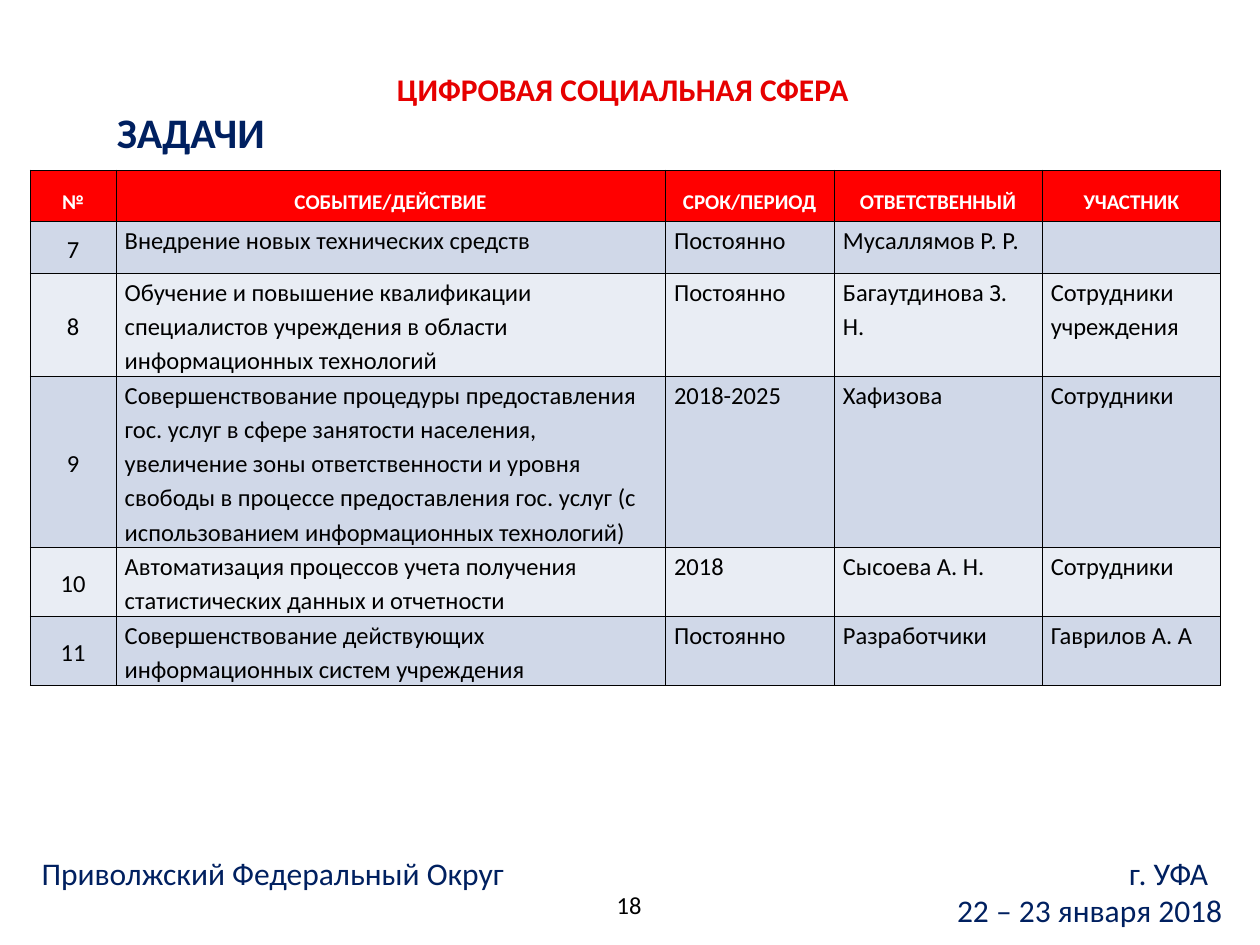
from dataclasses import dataclass

from lxml import etree
from pptx import Presentation
from pptx.dml.color import RGBColor
from pptx.enum.text import MSO_ANCHOR, MSO_AUTO_SIZE, PP_ALIGN
from pptx.oxml.ns import qn
from pptx.util import Inches, Pt

LEFT, CENTER, RIGHT = PP_ALIGN.LEFT, PP_ALIGN.CENTER, PP_ALIGN.RIGHT
TOP, MIDDLE = MSO_ANCHOR.TOP, MSO_ANCHOR.MIDDLE
NO_AUTOFIT = MSO_AUTO_SIZE.NONE


@dataclass(frozen=True)
class Theme:
    font: str = "Calibri"
    title: str = "E60000"
    navy: str = "002060"
    header: str = "FF0000"
    bands: tuple = ("D0D8E8", "E9EDF4")
    black: str = "000000"
    white: str = "FFFFFF"
    heading_size: int = 24
    title_size: int = 18
    body_size: int = 14
    header_size: int = 12
    border: float = 0.5


THEME = Theme()
SLIDE_SIZE = (10, 7.5)

TITLE = "ЦИФРОВАЯ СОЦИАЛЬНАЯ СФЕРА"
HEADING = "ЗАДАЧИ"
FOOTER_LINES = [("Приволжский Федеральный Округ\tг. УФА", LEFT), ("22 – 23 января 2018", RIGHT)]
FOOTER_TAB = 9.26
SLIDE_NUMBER = "18"

HEADERS = ["№", "СОБЫТИЕ/ДЕЙСТВИЕ", "СРОК/ПЕРИОД", "ОТВЕТСТВЕННЫЙ", "УЧАСТНИК"]
TASKS = [
    ("7", "Внедрение новых технических средств", "Постоянно", "Мусаллямов Р. Р.", ""),
    ("8", "Обучение и повышение квалификации специалистов учреждения в области "
          "информационных технологий", "Постоянно", "Багаутдинова З. Н.", "Сотрудники учреждения"),
    ("9", "Совершенствование процедуры предоставления гос. услуг в сфере занятости населения, "
          "увеличение зоны ответственности и уровня свободы в процессе предоставления гос. услуг "
          "(с использованием информационных технологий)", "2018-2025", "Хафизова", "Сотрудники"),
    ("10", "Автоматизация процессов учета получения статистических данных и отчетности",
     "2018", "Сысоева А. Н.", "Сотрудники"),
    ("11", "Совершенствование действующих информационных систем учреждения",
     "Постоянно", "Разработчики", "Гаврилов А. А"),
]
COLUMN_WIDTHS = [0.68, 4.36, 1.34, 1.65, 1.42]
ROW_HEIGHTS = [0.41, 0.41, 0.81, 1.34, 0.53, 0.53]
TABLE_ORIGIN = (0.24, 1.35)


def set_attributes(target, values):
    for name, value in values.items():
        setattr(target, name, value)


def write_paragraph(paragraph, text, size, color, bold=False, alignment=LEFT, spacing=None):
    set_attributes(paragraph, {"alignment": alignment, "line_spacing": spacing})
    font_values = {"name": THEME.font, "size": Pt(size), "bold": bold}
    targets = [paragraph.font]
    if text:
        run = paragraph.add_run()
        run.text = text
        targets = [run.font]
    for font in targets:
        set_attributes(font, font_values)
        font.color.rgb = RGBColor.from_string(color)


def format_box(shape, box, anchor=MIDDLE, **frame_values):
    set_attributes(shape, dict(zip(("left", "top", "width", "height"), map(Inches, box))))
    frame = shape.text_frame
    set_attributes(frame, {"word_wrap": True, "auto_size": NO_AUTOFIT,
                           "vertical_anchor": anchor, **frame_values})
    return frame


def add_text_box(slide, box, **frame_values):
    return format_box(slide.shapes.add_textbox(0, 0, 0, 0), box, **frame_values)


def add_right_tab(paragraph, position):
    tabs = etree.SubElement(paragraph._p.get_or_add_pPr(), qn("a:tabLst"))
    etree.SubElement(tabs, qn("a:tab"), pos=str(Inches(position)), algn="r")


def add_borders(cell):
    properties = cell._tc.get_or_add_tcPr()
    for side in ("lnL", "lnR", "lnT", "lnB"):
        line = etree.SubElement(properties, qn(f"a:{side}"), w=str(Pt(THEME.border)))
        fill = etree.SubElement(line, qn("a:solidFill"))
        etree.SubElement(fill, qn("a:srgbClr"), val=THEME.black)


def format_cell(cell, text, row, column):
    add_borders(cell)
    is_header = row == 0
    cell.fill.solid()
    color = THEME.header if is_header else THEME.bands[(row - 1) % 2]
    cell.fill.fore_color.rgb = RGBColor.from_string(color)
    paragraph = cell.text_frame.paragraphs[0]
    if is_header:
        write_paragraph(paragraph, text, THEME.header_size, THEME.white, True, CENTER, 1.5)
        return
    set_attributes(cell, {"margin_left": Inches(0.07), "margin_right": Inches(0.07),
                          "margin_top": 0, "margin_bottom": 0,
                          "vertical_anchor": TOP if column else MIDDLE})
    write_paragraph(paragraph, text, THEME.body_size, THEME.black,
                    alignment=LEFT if column else CENTER, spacing=1.15)


def add_task_table(slide):
    rows = [HEADERS, *TASKS]
    size = (sum(COLUMN_WIDTHS), sum(ROW_HEIGHTS))
    table = slide.shapes.add_table(len(rows), len(HEADERS),
                                   *map(Inches, TABLE_ORIGIN + size)).table
    for column, width in zip(table.columns, COLUMN_WIDTHS):
        column.width = Inches(width)
    for row, height in zip(table.rows, ROW_HEIGHTS):
        row.height = Inches(height)
    for row, texts in enumerate(rows):
        for column, text in enumerate(texts):
            format_cell(table.cell(row, column), text, row, column)


def add_footer(slide):
    frame = add_text_box(slide, (0.13, 6.78, 9.67, 0.59), margin_left=Inches(0.2))
    for index, (text, alignment) in enumerate(FOOTER_LINES):
        paragraph = frame.add_paragraph() if index else frame.paragraphs[0]
        write_paragraph(paragraph, text, THEME.title_size, THEME.navy, alignment=alignment)
        if "\t" in text:
            add_right_tab(paragraph, FOOTER_TAB)


def main():
    presentation = Presentation()
    presentation.slide_width, presentation.slide_height = map(Inches, SLIDE_SIZE)
    slide = presentation.slides.add_slide(presentation.slide_layouts[5])

    title = format_box(slide.shapes.title, (3.05, 0.51, 3.83, 0.39))
    write_paragraph(title.paragraphs[0], TITLE, THEME.title_size, THEME.title, True)

    heading = add_text_box(slide, (0.83, 0.8, 5, 0.5), anchor=TOP)
    write_paragraph(heading.paragraphs[0], HEADING, THEME.heading_size, THEME.navy, True)

    add_task_table(slide)
    add_footer(slide)

    number = add_text_box(slide, (4.75, 6.98, 0.44, 0.4))
    write_paragraph(number.paragraphs[0], SLIDE_NUMBER, THEME.body_size, THEME.black,
                    alignment=RIGHT)

    presentation.save("out.pptx")


if __name__ == "__main__":
    main()
